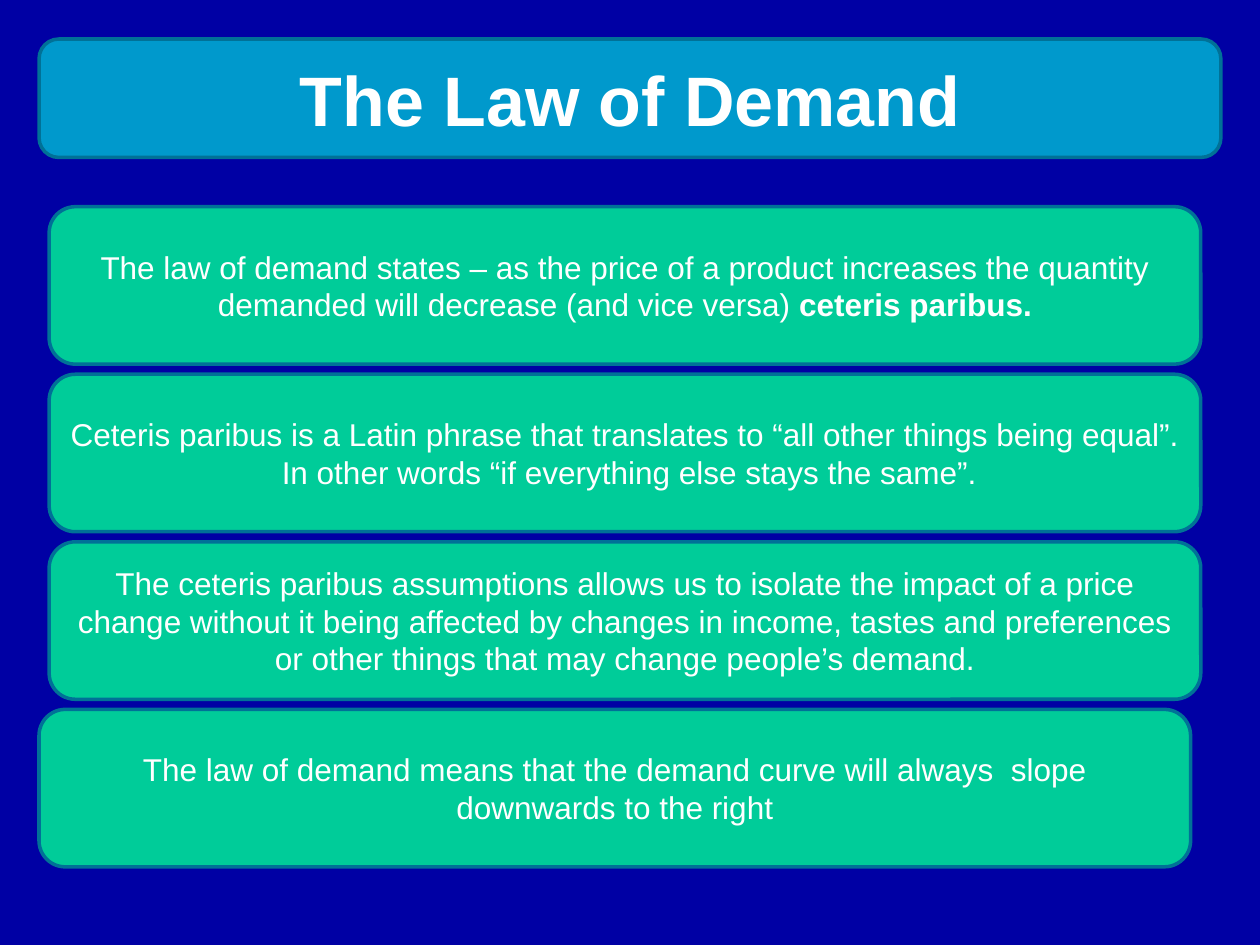
from pptx import Presentation
from pptx.dml.color import RGBColor
from pptx.enum.shapes import MSO_SHAPE
from pptx.enum.text import MSO_ANCHOR, PP_ALIGN
from pptx.util import Inches, Pt

WIDTH, HEIGHT = 10, 7.5
ROW_TOP, ROW_PITCH, ROW_HEIGHT = 1.64, 1.33, 1.25

STATEMENTS = [
    [("The law of demand states – as the price of a product increases "
      "the quantity demanded will decrease (and vice versa) ", False),
     ("ceteris paribus.", True)],
    [("Ceteris paribus is a Latin phrase that translates to “all other things "
      "being equal”.  In other words “if everything else stays the same”.", False)],
    [("The ceteris paribus assumptions allows us to isolate the impact of a price "
      "change without it being affected by changes in income, tastes and "
      "preferences or other things that may change people’s demand.", False)],
    [("The law of demand means that the demand curve will always  slope "
      "downwards to the right", False)],
]


def color(value):
    return RGBColor.from_string(value)


def add_run(p, text, size=18, bold=False, fill="FFFFFF", name="Arial"):
    r = p.add_run()
    r.text = text
    r.font.name, r.font.size, r.font.bold = name, Pt(size), bold
    r.font.color.rgb = color(fill)


class Deck:
    """Holds the style and the current slide."""
    background, outline = "0000A4", "007197"
    title_fill, panel_fill = "0099CC", "00CC99"

    def __init__(self):
        self.prs = Presentation()
        self.prs.slide_width, self.prs.slide_height = Inches(WIDTH), Inches(HEIGHT)

    def slide(self):
        self.s = self.prs.slides.add_slide(self.prs.slide_layouts[6])
        self.s.background.fill.solid()
        self.s.background.fill.fore_color.rgb = color(self.background)

    def panel(self, left, top, width, height, runs, fill, size):
        sp = self.s.shapes.add_shape(
            MSO_SHAPE.ROUNDED_RECTANGLE,
            *(Inches(v) for v in (left, top, width, height)))
        sp.shadow.inherit = False
        sp.fill.solid()
        sp.fill.fore_color.rgb = color(fill)
        sp.line.color.rgb = color(self.outline)
        sp.line.width = Pt(2)
        tf = sp.text_frame
        tf.word_wrap = True
        tf.vertical_anchor = MSO_ANCHOR.MIDDLE
        p = tf.paragraphs[0]
        p.alignment = PP_ALIGN.CENTER
        for text, bold in runs:
            add_run(p, text, size=size, bold=bold)

    def title(self, text):
        self.panel(0.31, 0.31, 9.38, 0.94, [(text, True)], self.title_fill, 40)

    def statement(self, row, runs, left=0.39):
        self.panel(left, ROW_TOP + row * ROW_PITCH, 9.14, ROW_HEIGHT,
                   runs, self.panel_fill, 18)


def main():
    deck = Deck()
    deck.slide()
    deck.title("The Law of Demand")

    # Stacked statements; the last one lines up with the title
    last = len(STATEMENTS) - 1
    for row, runs in enumerate(STATEMENTS):
        deck.statement(row, runs, left=0.31 if row == last else 0.39)

    deck.prs.save("out.pptx")


if __name__ == "__main__":
    main()
